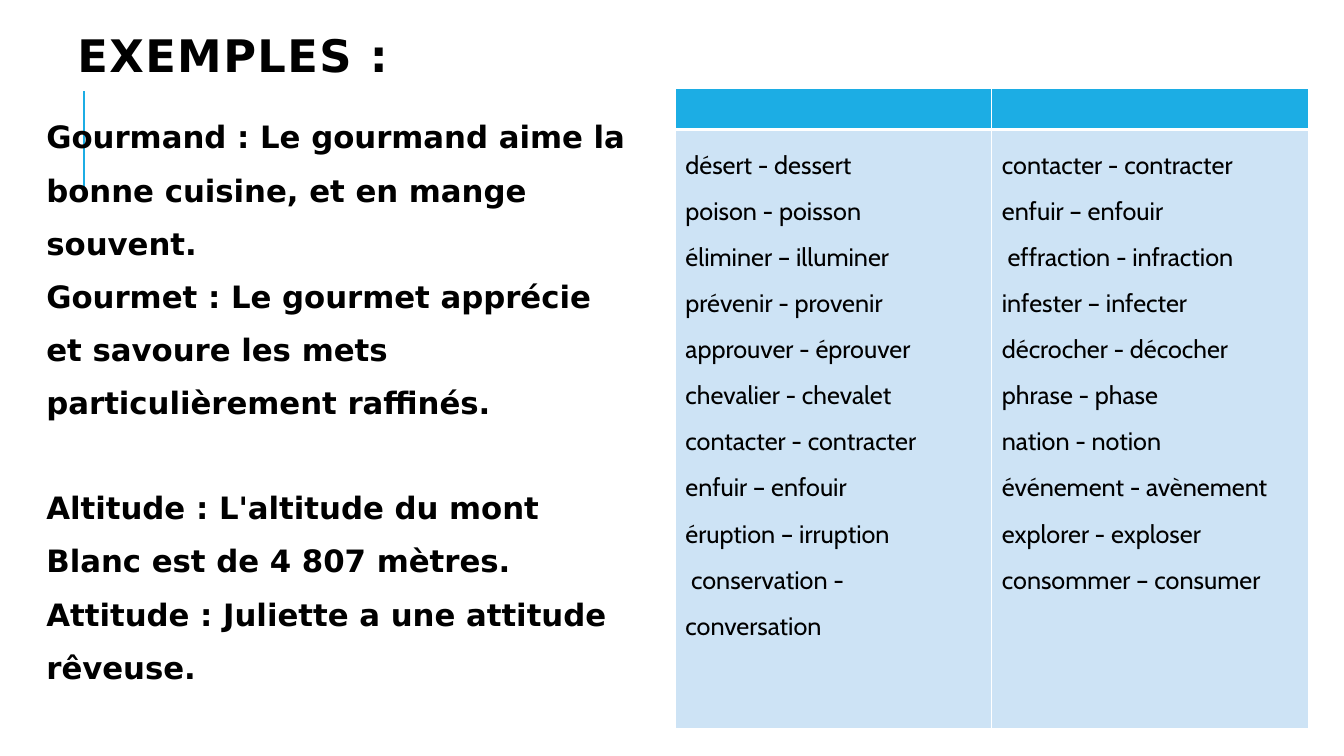
from dataclasses import dataclass

from lxml import etree
from pptx import Presentation
from pptx.dml.color import RGBColor
from pptx.enum.shapes import MSO_CONNECTOR
from pptx.enum.text import MSO_ANCHOR
from pptx.oxml.ns import qn
from pptx.util import Cm, Pt

STRAIGHT = MSO_CONNECTOR.STRAIGHT
TOP, MIDDLE = MSO_ANCHOR.TOP, MSO_ANCHOR.MIDDLE


@dataclass(frozen=True)
class Theme:
    accent: str = "1CADE4"
    cell: str = "CDE3F5"
    paper: str = "FFFFFF"
    ink: str = "000000"
    heading_font: str = "DejaVu Sans"
    list_font: str = "Cabin"
    title_size: float = 32
    body_size: float = 22
    list_size: float = 18


def write(paragraph, text, *, font, size, color, bold=False,
          line_spacing=1.0, space_before=0, tracking=0):
    """Put one formatted run of text into a paragraph."""
    paragraph.line_spacing = line_spacing
    paragraph.space_before = Pt(space_before)
    run = paragraph.add_run()
    run.text = text
    run.font.name, run.font.size, run.font.bold = font, Pt(size), bold
    run.font.color.rgb = RGBColor.from_string(color)
    if tracking:
        run._r.get_or_add_rPr().set("spc", str(tracking * 100))


def write_all(frame, texts, gaps=None, **style):
    """Fill a text frame; gaps maps a paragraph index to its space before."""
    for i, text in enumerate(texts):
        paragraph = frame.add_paragraph() if i else frame.paragraphs[0]
        write(paragraph, text, space_before=(gaps or {}).get(i, 0), **style)


class SlideBuilder:
    def __init__(self, slide, theme):
        self.slide, self.theme = slide, theme
        slide.background.fill.solid()
        slide.background.fill.fore_color.rgb = RGBColor.from_string(theme.paper)

    def line(self, x1, y1, x2, y2, width):
        rule = self.slide.shapes.add_connector(
            STRAIGHT, Cm(x1), Cm(y1), Cm(x2), Cm(y2))
        rule.line.color.rgb = RGBColor.from_string(self.theme.accent)
        rule.line.width = Pt(width)
        etree.SubElement(rule._element.spPr, qn("a:effectLst"))

    def text(self, box, texts, anchor=TOP, insets=(0.25, 0.13), **style):
        area = self.slide.shapes.add_textbox(*(Cm(v) for v in box))
        frame = area.text_frame
        frame.word_wrap, frame.vertical_anchor = True, anchor
        frame.margin_left = Cm(insets[0])
        frame.margin_right = frame.margin_top = frame.margin_bottom = Cm(insets[1])
        write_all(frame, texts, **style)

    def border(self, cell, **widths):
        properties = cell._tc.get_or_add_tcPr()
        for side in "LRTB":
            edge = etree.SubElement(properties, qn(f"a:ln{side}"),
                                    w=str(Pt(widths.get(side, 1))))
            fill = etree.SubElement(edge, qn("a:solidFill"))
            etree.SubElement(fill, qn("a:srgbClr"), val=self.theme.paper)

    def word_table(self, box, columns, row_heights, **style):
        """Draw an empty header band above one cell of words per column."""
        table = self.slide.shapes.add_table(
            len(row_heights), len(columns), *(Cm(v) for v in box)).table
        table.first_row = table.horz_banding = False
        for row, height in zip(table.rows, row_heights):
            row.height = Cm(height)
        for i, words in enumerate(columns):
            header, listing = table.cell(0, i), table.cell(1, i)
            self.border(header, B=3)
            self.border(listing, T=3)
            for cell, color in ((header, self.theme.accent),
                                (listing, self.theme.cell)):
                cell.fill.solid()
                cell.fill.fore_color.rgb = RGBColor.from_string(color)
            write_all(listing.text_frame, words, **style)


EXAMPLES = [
    "Gourmand : Le gourmand aime la bonne cuisine, et en mange souvent.",
    "Gourmet : Le gourmet apprécie et savoure les mets particulièrement raffinés.",
    "Altitude : L'altitude du mont Blanc est de 4 807 mètres.",
    "Attitude : Juliette a une attitude rêveuse.",
]
WORD_PAIRS = [
    ["désert - dessert", "poison - poisson", "éliminer – illuminer",
     "prévenir - provenir", "approuver - éprouver", "chevalier - chevalet",
     "contacter - contracter", "enfuir – enfouir", "éruption – irruption",
     " conservation - conversation"],
    ["contacter - contracter", "enfuir – enfouir", " effraction - infraction",
     "infester – infecter", "décrocher - décocher", "phrase - phase",
     "nation - notion", "événement - avènement", "explorer - exploser",
     "consommer – consumer"],
]


def main():
    deck = Presentation()
    deck.slide_width, deck.slide_height = Cm(33.87), Cm(19.05)
    theme = Theme()
    page = SlideBuilder(deck.slides.add_slide(deck.slide_layouts[6]), theme)
    heading = dict(font=theme.heading_font, color=theme.ink, bold=True)

    # Accent rule and title
    page.line(2.12, 4.83, 2.12, 2.29, 1.5)
    page.text((1.7, 0.61, 27, 1.8), ["EXEMPLES :"], anchor=MIDDLE,
              size=theme.title_size, line_spacing=0.8, tracking=1, **heading)

    # Example sentences, with one line of space between the two pairs
    page.text((0.79, 2.44, 15.27, 15.09), EXAMPLES, insets=(0.38, 0.13),
              gaps={2: 36.9}, size=theme.body_size, line_spacing=1.44, **heading)

    # Word pairs
    page.word_table((17.02, 2.24, 15.95, 16.13), WORD_PAIRS, (1.02, 15.11),
                    font=theme.list_font, size=theme.list_size,
                    color=theme.ink, line_spacing=1.5)

    deck.save("out.pptx")


if __name__ == "__main__":
    main()
